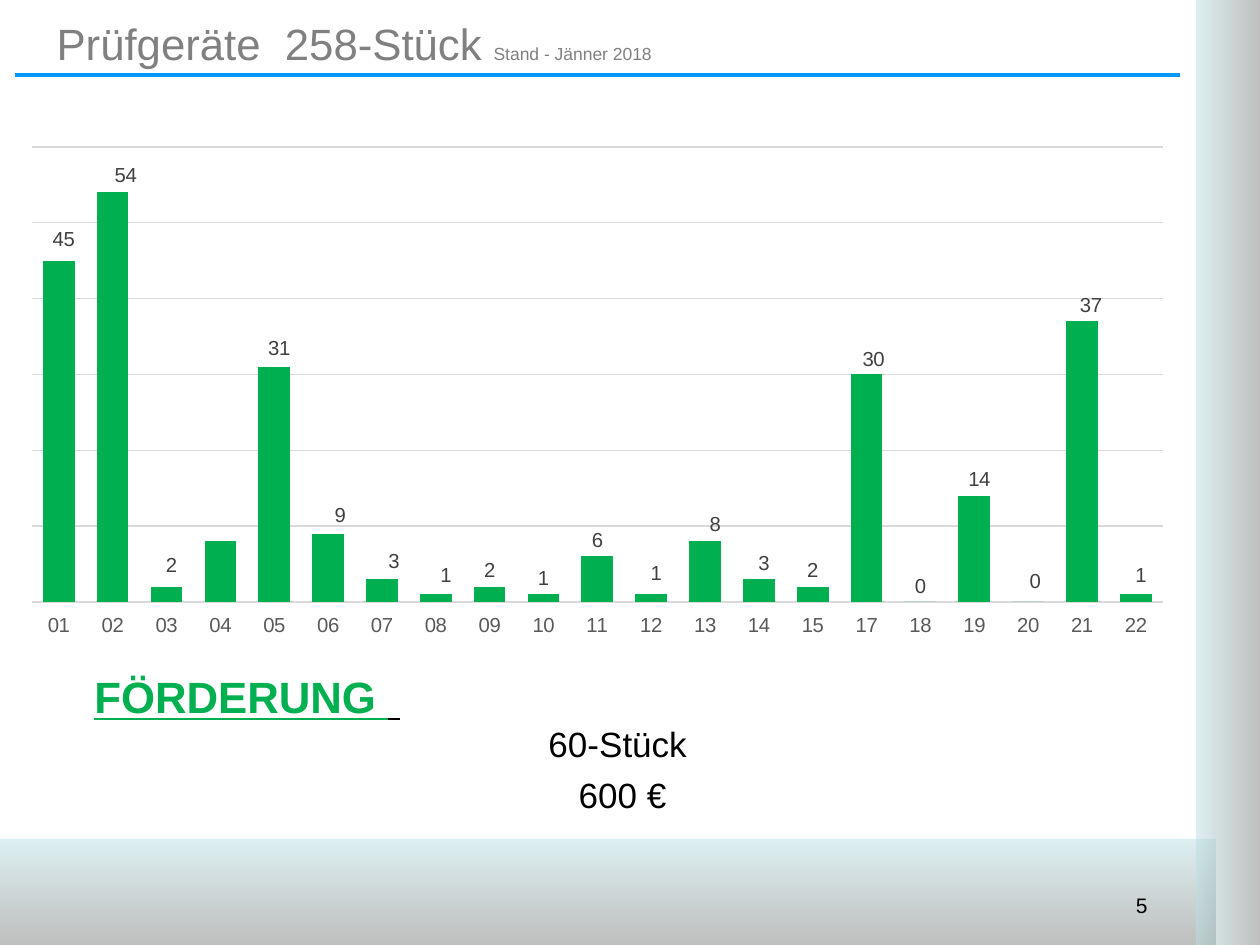
from lxml import etree
from pptx import Presentation
from pptx.chart.data import CategoryChartData
from pptx.dml.color import RGBColor
from pptx.enum.chart import XL_CHART_TYPE, XL_LABEL_POSITION, XL_TICK_LABEL_POSITION, XL_TICK_MARK
from pptx.enum.shapes import MSO_CONNECTOR, MSO_SHAPE
from pptx.enum.text import MSO_ANCHOR, PP_ALIGN
from pptx.oxml.ns import qn
from pptx.util import Emu, Pt

RECTANGLE = MSO_SHAPE.RECTANGLE
STRAIGHT = MSO_CONNECTOR.STRAIGHT
COLUMNS = XL_CHART_TYPE.COLUMN_CLUSTERED
OUTSIDE = XL_LABEL_POSITION.OUTSIDE_END
LOW = XL_TICK_LABEL_POSITION.LOW
NO_TICK = XL_TICK_MARK.NONE
LEFT, CENTER, RIGHT = PP_ALIGN.LEFT, PP_ALIGN.CENTER, PP_ALIGN.RIGHT
MIDDLE = MSO_ANCHOR.MIDDLE

FONT = "Arial"
GREEN, GREY, BLACK = "00B050", "808080", "000000"
CATEGORIES = [f"{number:02d}" for number in range(1, 23) if number != 16]
DEVICES = [45, 54, 2, 8, 31, 9, 3, 1, 2, 1, 6, 1, 8, 3, 2, 30, 0, 14, 0, 37, 1]
UNLABELLED = 3
LABEL_SHIFTS = {
    0: (5, -5), 1: (13, -1), 2: (5, -5), 4: (5, -3), 5: (12, -2),
    6: (12, -2), 7: (10, -3), 11: (5, -5), 12: (10, -1), 13: (5, 0),
    15: (7, 1), 17: (5, 0), 18: (7, -5), 19: (9, 0), 20: (5, -3),
}


def px(length):
    """Turn px at 126 to the inch into EMU."""
    return Emu(round(length * 914400 / 126))


def place(box):
    """Turn a px box into EMU lengths."""
    return [px(length) for length in box]


def color(value):
    """Turn a hex string into a colour."""
    return RGBColor.from_string(value)


def style(font, size, value):
    """Set the typeface, size and colour of a font."""
    font.name, font.size = FONT, Pt(size)
    font.color.rgb = color(value)


def add_span(para, text, size, value):
    """Add a formatted run to a paragraph."""
    span = para.add_run()
    span.text = text
    style(span.font, size, value)
    return span


def child(parent, tag, **attributes):
    """Append an XML element with the given attributes."""
    return etree.SubElement(parent, qn(tag), attributes)


def add_band(page, box, angle):
    """Draw a half-transparent gradient band."""
    band = page.shapes.add_shape(RECTANGLE, *place(box))
    band.shadow.inherit = False
    band.line.fill.background()
    band.fill.gradient()
    band.fill.gradient_angle = angle
    for stop, value in zip(band.fill.gradient_stops, ("BBE0E3", GREY)):
        stop.color.rgb = color(value)
    for tint in band._element.spPr.iter(qn("a:srgbClr")):
        child(tint, "a:alpha", val="49000")


def add_header(page, box):
    """Place the title and the rule beneath it."""
    left, top, width, height = box
    title = page.shapes.title
    title.left, title.top, title.width, title.height = place((left + 29, top, 1090, 86))
    title.text_frame.vertical_anchor = MIDDLE
    para = title.text_frame.paragraphs[0]
    para.alignment = LEFT
    add_span(para, "Prüfgeräte  258-Stück ", 25, GREY)
    add_span(para, "Stand - Jänner 2018", 10, GREY)
    bottom = top + height
    rule = page.shapes.add_connector(STRAIGHT, *place((left, bottom, left + width, bottom)))
    rule.line.color.rgb = color("0099FF")
    rule.line.width = Pt(2)
    child(rule._element.spPr, "a:effectLst")


def manual_layout(values, **modes):
    """Build a chart layout element from its modes and values."""
    layout = etree.Element(qn("c:layout"))
    manual = child(layout, "c:manualLayout")
    for tag, value in {**modes, **values}.items():
        child(manual, f"c:{tag}", val=str(value))
    return layout


def label_columns(series, width, height):
    """Show the values above the columns, shifted where needed."""
    labels = series.data_labels
    labels.show_value = True
    labels.number_format, labels.number_format_is_linked = "#,##0", False
    labels.position = OUTSIDE
    style(labels.font, 11.6, "404040")
    for index, (right, down) in LABEL_SHIFTS.items():
        label = series.points[index].data_label
        label.position = OUTSIDE
        style(label.font, 11.6, "404040")
        shift = {"x": round(right / width, 4), "y": round(down / height, 4)}
        element = labels._element.xpath(f"c:dLbl[c:idx/@val='{index}']")[0]
        element.insert(1, manual_layout(shift))
    series.points[UNLABELLED].data_label.position = OUTSIDE
    hidden = labels._element.xpath(f"c:dLbl[c:idx/@val='{UNLABELLED}']")[0]
    for part in hidden[1:]:
        hidden.remove(part)
    child(hidden, "c:delete", val="1")


def add_device_chart(page, box):
    """Place the column chart of test devices."""
    width, height = box[2:]
    data = CategoryChartData()
    data.categories = CATEGORIES
    data.add_series("Series 1", DEVICES)
    chart = page.shapes.add_chart(COLUMNS, *place(box), data).chart
    chart.has_legend = chart.has_title = False
    style(chart.font, 10, BLACK)
    plot = chart.plots[0]
    plot.gap_width, plot.vary_by_categories = 70, False
    series = plot.series[0]
    series.format.fill.solid()
    series.format.fill.fore_color.rgb = color(GREEN)
    label_columns(series, width, height)

    axis = chart.category_axis
    axis.major_tick_mark = axis.minor_tick_mark = NO_TICK
    axis.tick_label_position = LOW
    axis.format.line.fill.background()
    style(axis.tick_labels.font, 11.6, "595959")
    scale = chart.value_axis
    scale.minimum_scale, scale.maximum_scale, scale.major_unit = 0, 60, 10
    scale.visible = False
    scale.has_major_gridlines = True
    scale.major_gridlines.format.line.color.rgb = color("D9D9D9")
    scale.major_gridlines.format.line.width = Pt(0.73)

    area = chart._chartSpace.find(".//" + qn("c:plotArea"))
    for layout in area.findall(qn("c:layout")):
        area.remove(layout)
    inner = {"x": 23 / width, "y": 10 / height, "w": 1131 / width, "h": 455 / height}
    inner = {tag: round(value, 4) for tag, value in inner.items()}
    area.insert(0, manual_layout(inner, layoutTarget="inner", xMode="edge", yMode="edge"))


def add_funding(page, box):
    """Place the funding heading with its two figures."""
    frame = page.shapes.add_textbox(*place(box)).text_frame
    frame.word_wrap = True
    heading = frame.paragraphs[0]
    heading.alignment = LEFT
    heading._p.get_or_add_pPr().set("marL", str(px(85)))
    word = add_span(heading, "FÖRDERUNG ", 25, GREEN)
    word.font.bold = word.font.underline = True
    add_span(heading, " ", 25, BLACK).font.underline = True
    for text, gap in (("60-Stück ", 0), ("600 €", 5)):
        para = frame.add_paragraph()
        para.alignment, para.space_before = CENTER, Pt(gap)
        para._p.get_or_add_pPr().set("marL", str(px(63)))
        add_span(para, text, 20, BLACK)


def add_page_number(page, box):
    """Place the page number."""
    frame = page.shapes.add_textbox(*place(box)).text_frame
    frame.word_wrap = True
    frame.paragraphs[0].alignment = RIGHT
    add_span(frame.paragraphs[0], "5", 12, BLACK)


def main():
    """Build the slide and save the deck."""
    deck = Presentation()
    deck.slide_width, deck.slide_height = px(1260), px(945)
    page = deck.slides.add_slide(deck.slide_layouts[5])
    add_band(page, (0, 839, 1216, 106), 270)
    add_band(page, (1196, 0, 64, 945), 0)
    add_page_number(page, (1071, 886, 89, 39))
    add_header(page, (15, 0, 1165, 75))
    add_device_chart(page, (9, 137, 1177, 501))
    add_funding(page, (-3, 664, 1188, 158))
    deck.save("out.pptx")


if __name__ == "__main__":
    main()
